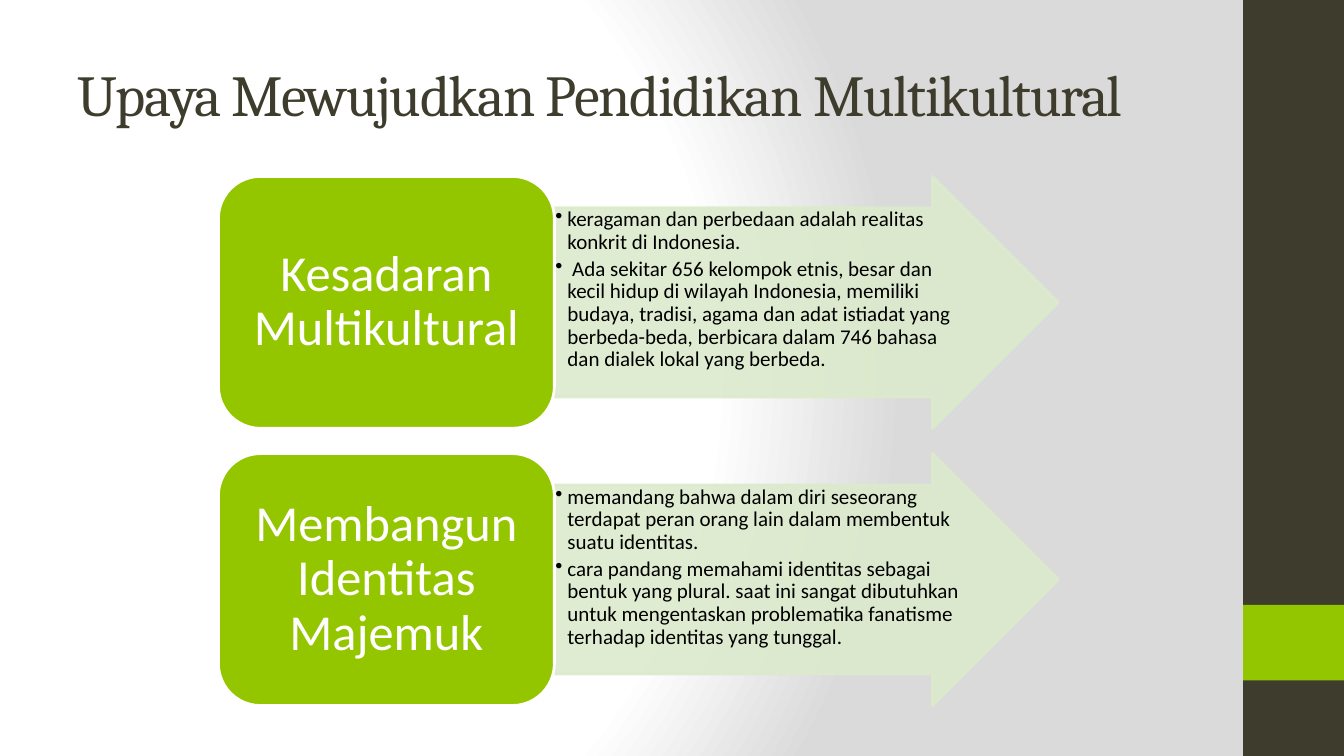
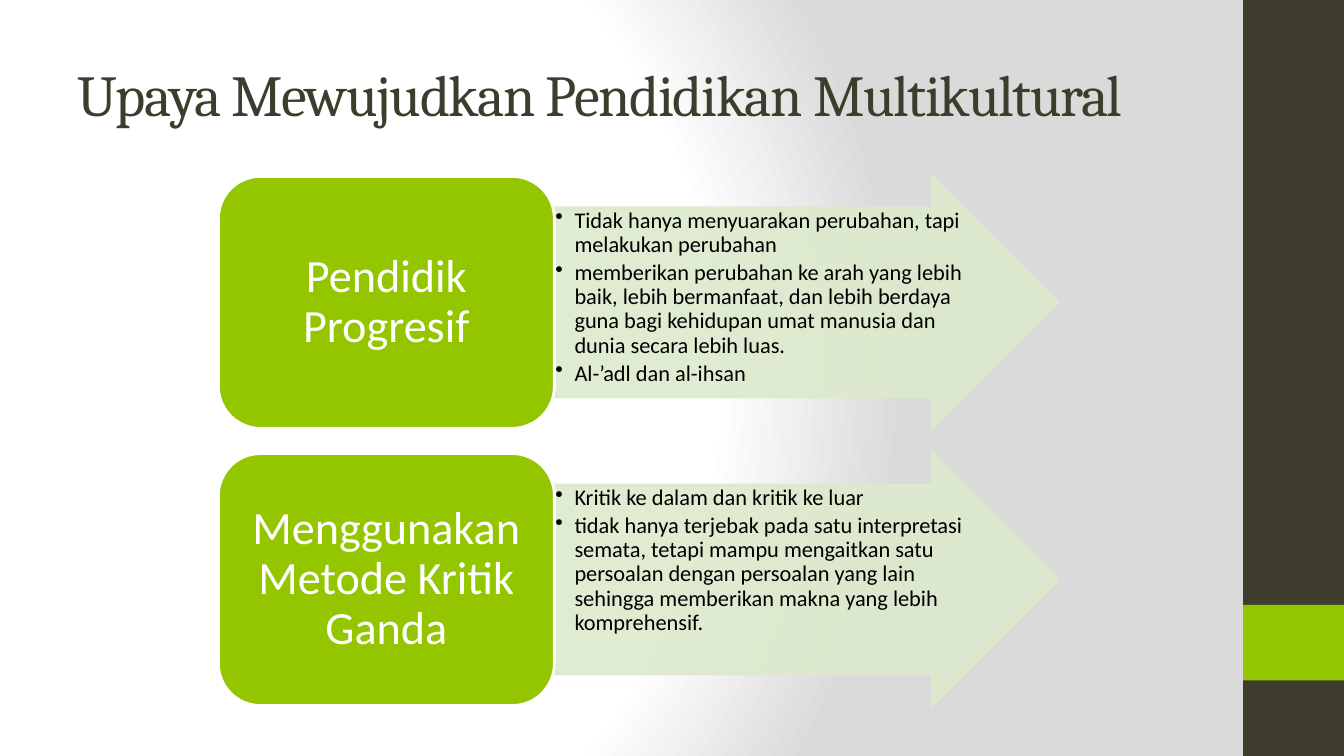
"""Build two slides on realising multicultural education."""
from dataclasses import dataclass
from typing import NamedTuple

from lxml import etree
from pptx import Presentation
from pptx import util as u
from pptx.dml.color import RGBColor
from pptx.enum import shapes, text
from pptx.oxml import parse_xml
from pptx.oxml.ns import nsdecls, qn


@dataclass(frozen=True)
class Theme:
    dark: str = "3E3D2D"
    accent: str = "94C600"
    pale: str = "DCEACC"
    white: str = "FFFFFF"
    black: str = "000000"
    backdrop: str = "DADADA"
    title_font: str = "Cambria"
    body_font: str = "Calibri"
    title_size: float = 41.4
    title_tracking: int = -100
    outline: float = 2
    opacity: int = 90
    line_spacing: float = 0.9
    paragraph_gap: float = 0.18


class Box(NamedTuple):
    column: float
    row: float
    columns: float
    rows: float


class Topic(NamedTuple):
    heading: str
    points: tuple[str, ...]


class Page(NamedTuple):
    heading_size: float
    point_size: float
    indent: float
    topics: tuple[Topic, ...]


THEME = Theme()
CELL = u.Inches(1) / 12
GRID_COLUMNS, GRID_ROWS = 160, 90
TITLE = "Upaya Mewujudkan Pendidikan Multikultural"
TITLE_BOX = Box(8, 3.6, 133.3, 15)
SIDE_BAND = Box(148, 0, 12, GRID_ROWS)
ACCENT_BAND = Box(148, 72, 12, 9)
HEADING_BOX = Box(26, 21, 40, 30)
ARROW_BOX = Box(66, 21, 60, 30)
TOPIC_GAP = 3

PAGES = (
    Page(36, 15, 0.12, (
        Topic("Kesadaran Multikultural", (
            "keragaman dan perbedaan adalah realitas konkrit di Indonesia.",
            " Ada sekitar 656 kelompok etnis, besar dan kecil hidup di wilayah Indonesia, "
            "memiliki budaya, tradisi, agama dan adat istiadat yang berbeda-beda, "
            "berbicara dalam 746 bahasa dan dialek lokal yang berbeda.",
        )),
        Topic("Membangun Identitas Majemuk", (
            "memandang bahwa dalam diri seseorang terdapat peran orang lain dalam "
            "membentuk suatu identitas.",
            "cara pandang memahami identitas sebagai bentuk yang plural. saat ini sangat "
            "dibutuhkan untuk mengentaskan problematika fanatisme terhadap identitas "
            "yang tunggal.",
        )),
    )),
    Page(33, 16, 0.19, (
        Topic("Pendidik Progresif", (
            "Tidak hanya menyuarakan perubahan, tapi melakukan perubahan",
            "memberikan perubahan ke arah yang lebih baik, lebih bermanfaat, dan lebih "
            "berdaya guna bagi kehidupan umat manusia dan dunia secara lebih luas.",
            "Al-’adl dan al-ihsan",
        )),
        Topic("Menggunakan Metode Kritik Ganda", (
            "Kritik ke dalam dan kritik ke luar",
            "tidak hanya terjebak pada satu interpretasi semata, tetapi mampu mengaitkan "
            "satu persoalan dengan persoalan yang lain sehingga memberikan makna yang "
            "lebih komprehensif.",
        )),
    )),
)


def cells(count: float) -> int:
    return round(count * CELL)


def place(box: Box) -> tuple[int, ...]:
    return tuple(cells(length) for length in box)


def paint_background(master) -> None:
    master.background.fill.solid()
    solid = master.element.xpath("p:cSld/p:bg/p:bgPr/a:solidFill")[0]
    stops = ((0, THEME.white), (75, THEME.white), (100, THEME.backdrop))
    stop_xml = "".join(
        f'<a:gs pos="{share * 1000}"><a:srgbClr val="{color}"/></a:gs>'
        for share, color in stops
    )
    gradient = parse_xml(
        f'<a:gradFill {nsdecls("a")} rotWithShape="1"><a:gsLst>{stop_xml}</a:gsLst>'
        '<a:path path="circle"><a:fillToRect l="20000" t="50000" r="100000" b="50000"/>'
        "</a:path></a:gradFill>"
    )
    solid.getparent().replace(solid, gradient)


def add_block(slide, kind: shapes.MSO_SHAPE, box: Box, fill: str, line: str | None = None):
    shape = slide.shapes.add_shape(kind, *place(box))
    shape.shadow.inherit = False
    shape.fill.solid()
    shape.fill.fore_color.rgb = RGBColor.from_string(fill)
    if line is None:
        shape.line.fill.background()
    else:
        shape.line.color.rgb = RGBColor.from_string(line)
        shape.line.width = u.Pt(THEME.outline)
    return shape


def make_translucent(shape) -> None:
    for color in shape.element.spPr.iter(qn("a:srgbClr")):
        etree.SubElement(color, qn("a:alpha"), val=str(THEME.opacity * 1000))


def set_frame(frame, anchor: text.MSO_ANCHOR, side: float, top: float) -> None:
    frame.word_wrap = True
    frame.vertical_anchor = anchor
    frame.margin_left = frame.margin_right = u.Inches(side)
    frame.margin_top = frame.margin_bottom = u.Inches(top)


def style(paragraph, font_name: str, size: float, color: str, align: text.PP_ALIGN) -> None:
    paragraph.alignment = align
    for run in paragraph.runs:
        run.font.name = font_name
        run.font.size = u.Pt(size)
        run.font.color.rgb = RGBColor.from_string(color)


def add_bullet(paragraph, indent: float) -> None:
    properties = paragraph._p.get_or_add_pPr()
    properties.set("marL", str(u.Inches(indent)))
    properties.set("indent", str(-u.Inches(indent)))
    etree.SubElement(properties, qn("a:buChar"), char="•")


def add_title(slide) -> None:
    frame = slide.shapes.add_textbox(*place(TITLE_BOX)).text_frame
    set_frame(frame, text.MSO_ANCHOR.MIDDLE, 0.1, 0.05)
    frame.text = TITLE
    paragraph = frame.paragraphs[0]
    style(paragraph, THEME.title_font, THEME.title_size, THEME.dark, text.PP_ALIGN.LEFT)
    paragraph.runs[0].font._element.set("spc", str(THEME.title_tracking))


def add_arrow(slide, box: Box, points: tuple[str, ...], page: Page) -> None:
    arrow = add_block(slide, shapes.MSO_SHAPE.RIGHT_ARROW, box, THEME.pale, THEME.pale)
    arrow.adjustments[0] = 0.75
    arrow.adjustments[1] = 0.5
    make_translucent(arrow)
    frame = arrow.text_frame
    set_frame(frame, text.MSO_ANCHOR.TOP, 0.01, 0.01)
    frame.text = "\n".join(points)
    for paragraph in frame.paragraphs:
        style(paragraph, THEME.body_font, page.point_size, THEME.black, text.PP_ALIGN.LEFT)
        paragraph.line_spacing = THEME.line_spacing
        paragraph.space_after = u.Pt(page.point_size * THEME.paragraph_gap)
        add_bullet(paragraph, page.indent)


def add_heading(slide, box: Box, heading: str, size: float) -> None:
    block = add_block(slide, shapes.MSO_SHAPE.ROUNDED_RECTANGLE, box, THEME.accent, THEME.white)
    frame = block.text_frame
    set_frame(frame, text.MSO_ANCHOR.MIDDLE, 0.15, 0.07)
    frame.text = heading
    paragraph = frame.paragraphs[0]
    style(paragraph, THEME.body_font, size, THEME.white, text.PP_ALIGN.CENTER)
    paragraph.line_spacing = THEME.line_spacing


def add_page(presentation, page: Page) -> None:
    slide = presentation.slides.add_slide(presentation.slide_layouts[6])
    for band, color in ((SIDE_BAND, THEME.dark), (ACCENT_BAND, THEME.accent)):
        add_block(slide, shapes.MSO_SHAPE.RECTANGLE, band, color)
    add_title(slide)
    for index, topic in enumerate(page.topics):
        row = HEADING_BOX.row + index * (HEADING_BOX.rows + TOPIC_GAP)
        add_arrow(slide, ARROW_BOX._replace(row=row), topic.points, page)
        add_heading(slide, HEADING_BOX._replace(row=row), topic.heading, page.heading_size)


def main() -> None:
    presentation = Presentation()
    presentation.slide_width = cells(GRID_COLUMNS)
    presentation.slide_height = cells(GRID_ROWS)
    paint_background(presentation.slide_master)
    for page in PAGES:
        add_page(presentation, page)
    presentation.save("out.pptx")


if __name__ == "__main__":
    main()
